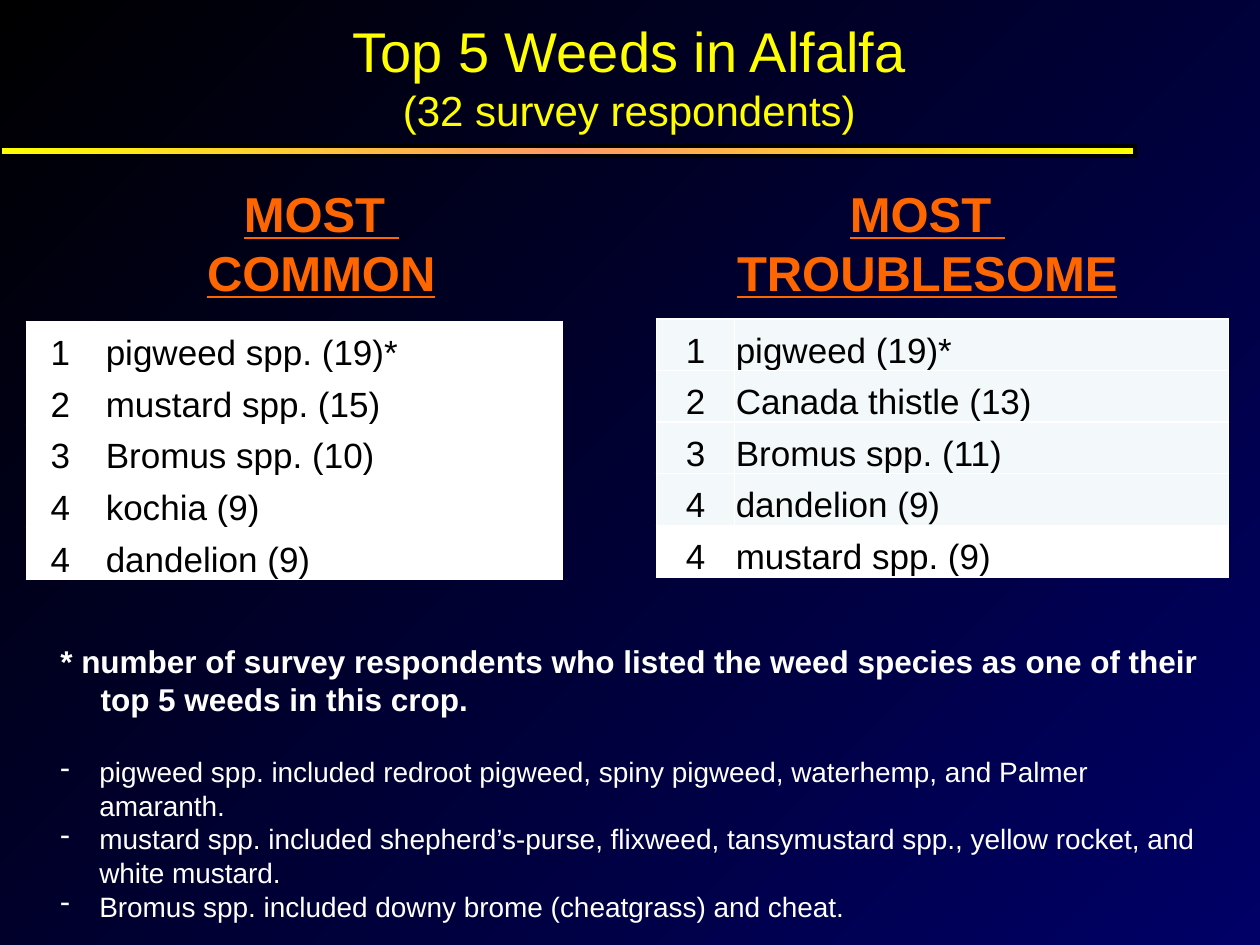
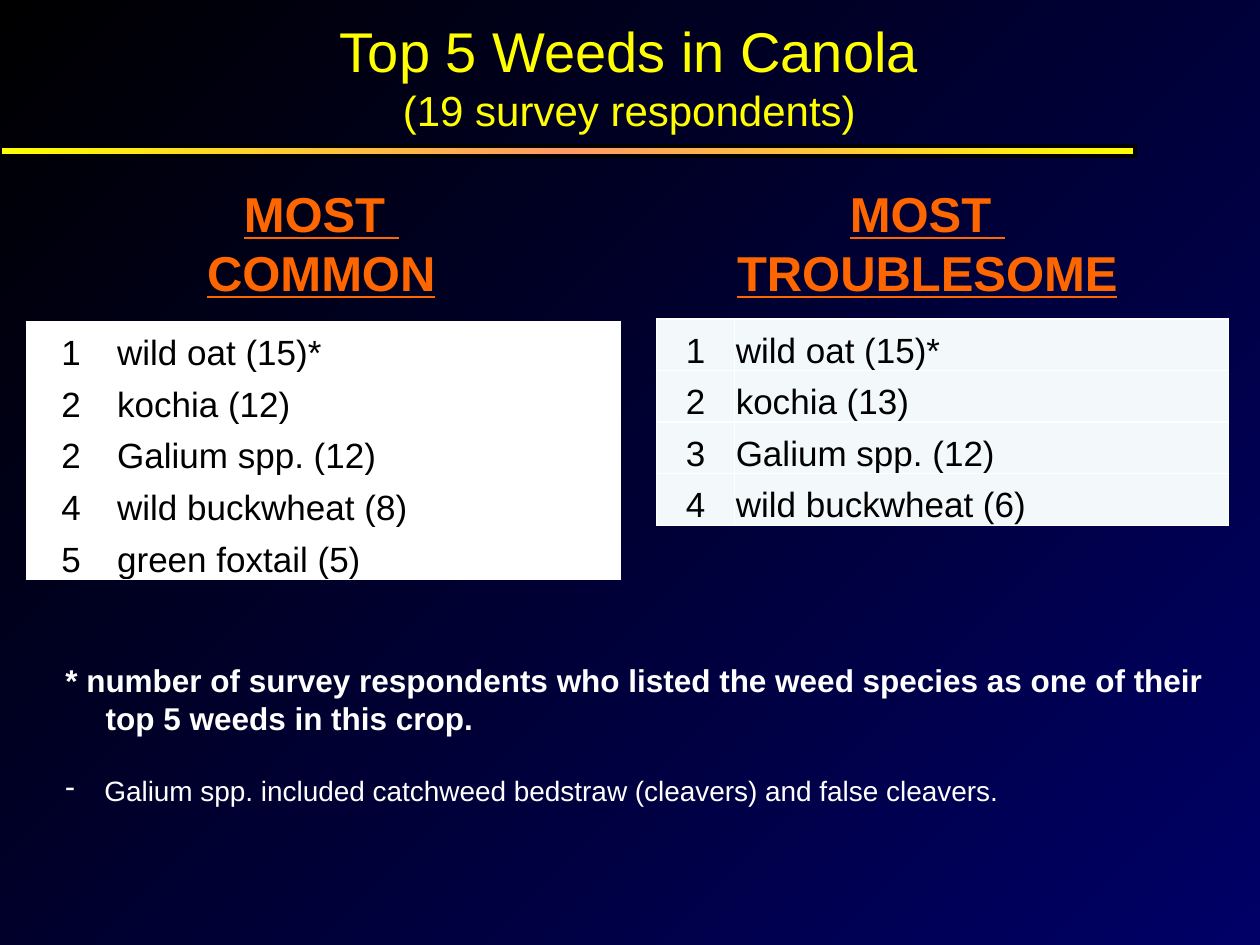
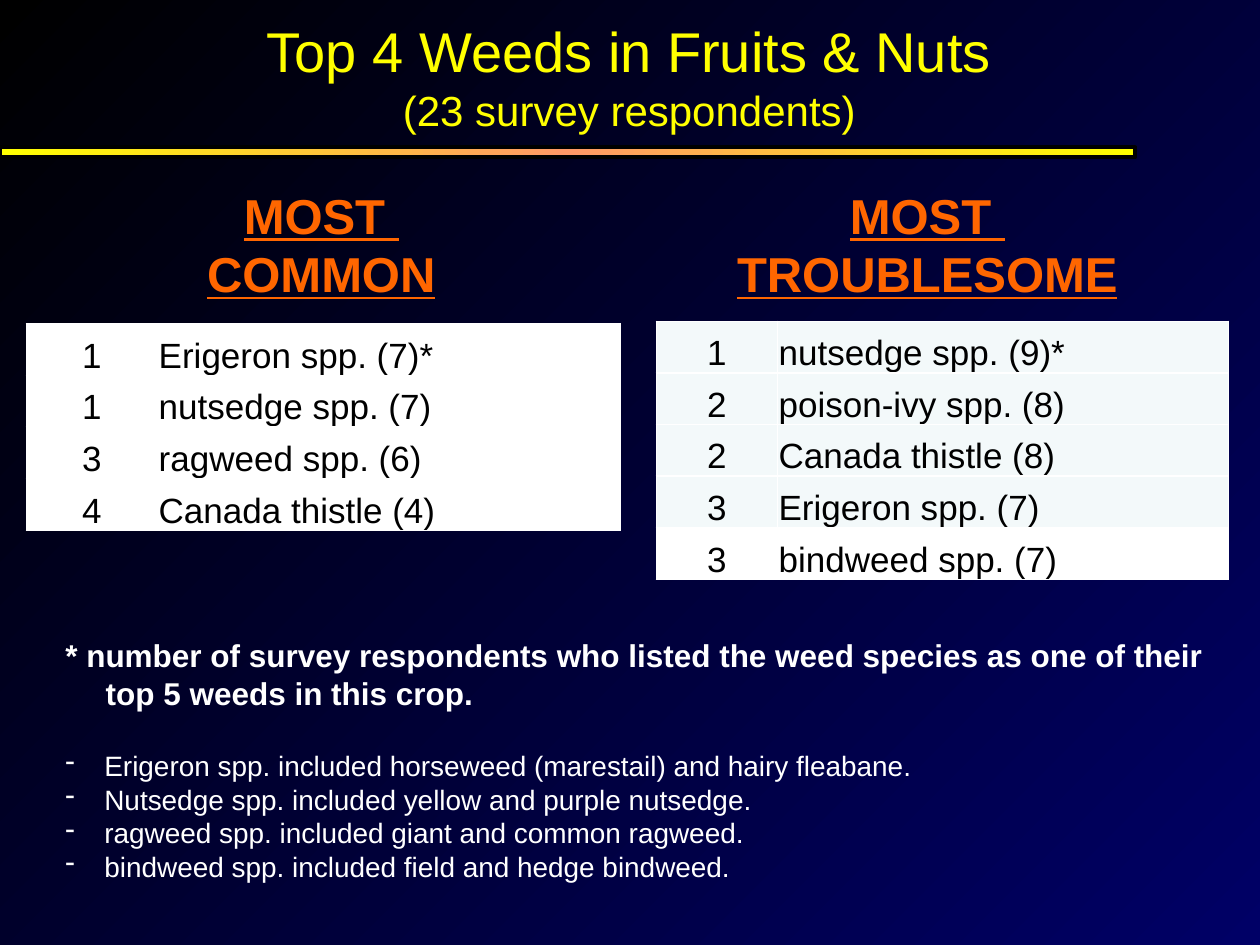
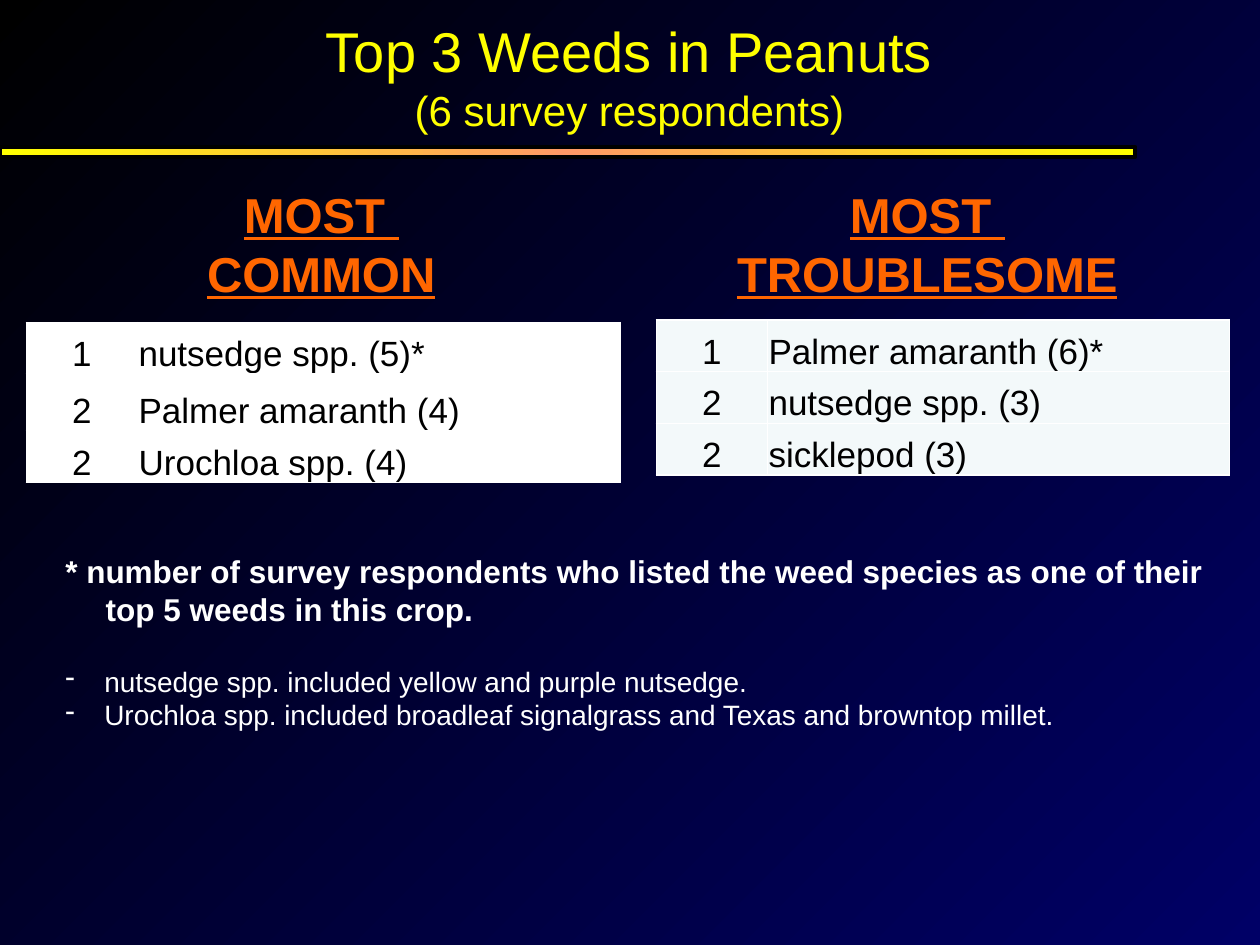
from copy import deepcopy
from dataclasses import dataclass

from lxml import etree
from pptx import Presentation
from pptx import util as u
from pptx.dml.color import RGBColor
from pptx.enum import shapes, text
from pptx.oxml import ns


@dataclass(frozen=True)
class Theme:
    font: str = "Arial"
    black: str = "000000"
    navy: str = "000066"
    yellow: str = "FFFF00"
    peach: str = "FF9966"
    orange: str = "FF6600"
    white: str = "FFFFFF"
    pale: str = "F3F9FA"
    title: int = 32
    sub: int = 24
    head: int = 28
    cell: int = 20
    note: int = 18
    item: int = 16


T = Theme()
MID = text.PP_ALIGN.CENTER
STAR = ("* number of survey respondents who listed the weed species "
        "as one of their top 5 weeds in this crop.")


def rgb(code):
    return RGBColor.from_string(code)


def put(par, words, size, color=T.white, bold=False, under=False,
        align=None, hang=0, after=0, mark=None):
    """Fill a paragraph with one run and format both."""
    run = par.add_run()
    run.text = words
    font = run.font
    font.name, font.size, font.bold = T.font, u.Pt(size), bold
    font.underline = under
    font.color.rgb = rgb(color)
    par.alignment = align
    par.space_after = u.Pt(after)
    if hang:
        props = par._p.get_or_add_pPr()
        props.set("marL", str(u.Inches(hang)))
        props.set("indent", str(-u.Inches(hang)))
        if mark:
            etree.SubElement(props, ns.qn("a:buChar")).set("char", mark)


def blend(fill, colors, angle):
    """Gradient with evenly spaced stops."""
    fill.gradient()
    fill.gradient_angle = angle
    first = fill.gradient_stops[0]._gs
    for _ in colors[2:]:
        first.addnext(deepcopy(first))
    for i, (stop, color) in enumerate(zip(fill.gradient_stops, colors)):
        stop.position = i / (len(colors) - 1)
        stop.color.rgb = rgb(color)


def edge(cell, color):
    """Thin line on all four sides of a cell."""
    props = cell._tc.get_or_add_tcPr()
    for side in ("lnL", "lnR", "lnT", "lnB"):
        line = etree.SubElement(props, ns.qn("a:" + side), w=str(u.Pt(1)))
        solid = etree.SubElement(line, ns.qn("a:solidFill"))
        etree.SubElement(solid, ns.qn("a:srgbClr"), val=color)


class Deck:
    def __init__(self):
        self.prs = Presentation()
        self.prs.slide_width = u.Inches(10)
        self.prs.slide_height = u.Inches(7.5)
        self.slide = None

    def page(self):
        self.slide = self.prs.slides.add_slide(self.prs.slide_layouts[6])
        blend(self.slide.background.fill, (T.black, T.navy), 315)

    def box(self, area, lines, wrap=True, grow=True):
        """Text box; lines are (words, format) pairs."""
        frame = self.slide.shapes.add_textbox(*map(u.Inches, area)).text_frame
        frame.word_wrap = wrap
        if grow:
            frame.auto_size = text.MSO_AUTO_SIZE.SHAPE_TO_FIT_TEXT
        for i, (words, form) in enumerate(lines):
            par = frame.add_paragraph() if i else frame.paragraphs[0]
            put(par, words, **form)
        return frame

    def title(self, name, count):
        form = dict(color=T.yellow, align=MID)
        frame = self.box((0.33, 0, 9.33, 1.2), [
            (name, dict(form, size=T.title)),
            (f"({count} survey respondents)", dict(form, size=T.sub)),
        ], grow=False)
        frame.vertical_anchor = text.MSO_ANCHOR.MIDDLE

    def band(self, top):
        bar = self.slide.shapes.add_shape(
            shapes.MSO_SHAPE.RECTANGLE, 0, u.Inches(top),
            u.Inches(9.01), u.Inches(0.08))
        bar.shadow.inherit = False
        blend(bar.fill, (T.yellow, T.peach, T.yellow), 0)
        bar.line.color.rgb = rgb(T.black)
        bar.line.width = u.Pt(2.25)

    def head(self, left, top, width, word, wrap):
        form = dict(size=T.head, color=T.orange, bold=True, under=True,
                    align=MID)
        self.box((left, top, width, 1.04),
                 [("MOST ", form), (word, form)], wrap)

    def table(self, left, top, cols, rows, tint, pad=0.01, tall=()):
        """Ranked weeds; the first four rows are tinted, tall maps row to height."""
        tall = dict(tall)
        highs = [tall.get(i, 0.41) for i in range(len(rows))]
        grid = self.slide.shapes.add_table(
            len(rows), 2, *map(u.Inches, (left, top, sum(cols), sum(highs)))).table
        grid.first_row = grid.horz_banding = False
        for col, width in zip(grid.columns, cols):
            col.width = u.Inches(width)
        for i, (row, values) in enumerate(zip(grid.rows, rows)):
            row.height = u.Inches(highs[i])
            for j, (cell, value) in enumerate(zip(row.cells, values)):
                cell.margin_left = u.Inches(pad if j else 0.01)
                cell.margin_right = cell.margin_top = u.Inches(0.01)
                cell.margin_bottom = 0
                cell.vertical_anchor = text.MSO_ANCHOR.BOTTOM
                edge(cell, T.white)
                cell.fill.solid()
                cell.fill.fore_color.rgb = rgb(tint if i < 4 else T.white)
                put(cell.text_frame.paragraphs[0], str(value), T.cell,
                    T.black, align=None if j else MID)

    def notes(self, left, top, high, items):
        lines = [(STAR, dict(size=T.note, bold=True, hang=0.32, after=21))]
        lines += [(item, dict(size=T.item, hang=0.31, mark="-"))
                  for item in items]
        self.box((left, top, 9.25, high), lines)

    def crop(self, name, count, common, hard, notes, drop=0):
        """One crop: title, two ranked tables and notes; drop shifts the middle."""
        self.page()
        self.title(name, count)
        self.band(1.16 + drop / 2)
        self.head(1.35, 1.41 + drop / 2, 2.4, "COMMON", True)
        self.head(5.73, 1.41 + drop / 2, 3.26, "TROUBLESOME", False)
        self.table(0.21, 2.55 + drop, tint=T.white, **common)
        self.table(5.21, 2.53 + drop, tint=T.pale, **hard)
        self.notes(**notes)


CROPS = [
    dict(
        name="Top 5 Weeds in Alfalfa", count=32,
        common=dict(cols=(0.54, 3.71), pad=0.09, rows=[
            (1, "pigweed spp. (19)*"), (2, "mustard spp. (15)"),
            (3, "Bromus spp. (10)"), (4, "kochia (9)"),
            (4, "dandelion (9)")]),
        hard=dict(cols=(0.62, 3.92), rows=[
            (1, "pigweed (19)*"), (2, "Canada thistle (13)"),
            (3, "Bromus spp. (11)"), (4, "dandelion (9)"),
            (4, "mustard spp. (9)")]),
        notes=dict(left=0.38, top=5.05, high=2.36, items=[
            "pigweed spp. included redroot pigweed, spiny pigweed, "
            "waterhemp, and Palmer amaranth.",
            "mustard spp. included shepherd’s-purse, flixweed, "
            "tansymustard spp., yellow rocket, and white mustard.",
            "Bromus spp. included downy brome (cheatgrass) and cheat."])),
    dict(
        name="Top 5 Weeds in Canola", count=19,
        common=dict(cols=(0.71, 4), rows=[
            (1, "wild oat (15)*"), (2, "kochia (12)"),
            (2, "Galium spp. (12)"), (4, "wild buckwheat (8)"),
            (5, "green foxtail (5)")]),
        hard=dict(cols=(0.62, 3.92), rows=[
            (1, "wild oat (15)*"), (2, "kochia (13)"),
            (3, "Galium spp. (12)"), (4, "wild buckwheat (6)")]),
        notes=dict(left=0.42, top=5.2, high=1.28, items=[
            "Galium spp. included catchweed bedstraw (cleavers) "
            "and false cleavers."])),
    dict(
        name="Top 4 Weeds in Fruits & Nuts", count=23, drop=0.02,
        common=dict(cols=(1.04, 3.67), rows=[
            (1, "Erigeron spp. (7)*"), (1, "nutsedge spp. (7)"),
            (3, "ragweed spp. (6)"), (4, "Canada thistle (4)")]),
        hard=dict(cols=(0.96, 3.58), rows=[
            (1, "nutsedge spp. (9)*"), (2, "poison-ivy spp. (8)"),
            (2, "Canada thistle (8)"), (3, "Erigeron spp. (7)"),
            (3, "bindweed spp. (7)")]),
        notes=dict(left=0.42, top=5, high=2.63, items=[
            "Erigeron spp. included horseweed (marestail) and hairy fleabane.",
            "Nutsedge spp. included yellow and purple nutsedge.",
            "ragweed spp. included giant and common ragweed.",
            "bindweed spp. included field and hedge bindweed."])),
    dict(
        name="Top 3 Weeds in Peanuts", count=6, drop=0.01,
        common=dict(cols=(0.88, 3.83), tall={1: 0.45}, rows=[
            (1, "nutsedge spp. (5)*"), (2, "Palmer amaranth (4)"),
            (2, "Urochloa spp. (4)")]),
        hard=dict(cols=(0.88, 3.67), rows=[
            (1, "Palmer amaranth (6)*"), (2, "nutsedge spp. (3)"),
            (2, "sicklepod (3)")]),
        notes=dict(left=0.42, top=4.33, high=1.82, items=[
            "nutsedge spp. included yellow and purple nutsedge.",
            "Urochloa spp. included broadleaf signalgrass and Texas "
            "and browntop millet."])),
]


def main():
    deck = Deck()
    for crop in CROPS:
        deck.crop(**crop)
    deck.prs.save("out.pptx")


if __name__ == "__main__":
    main()
